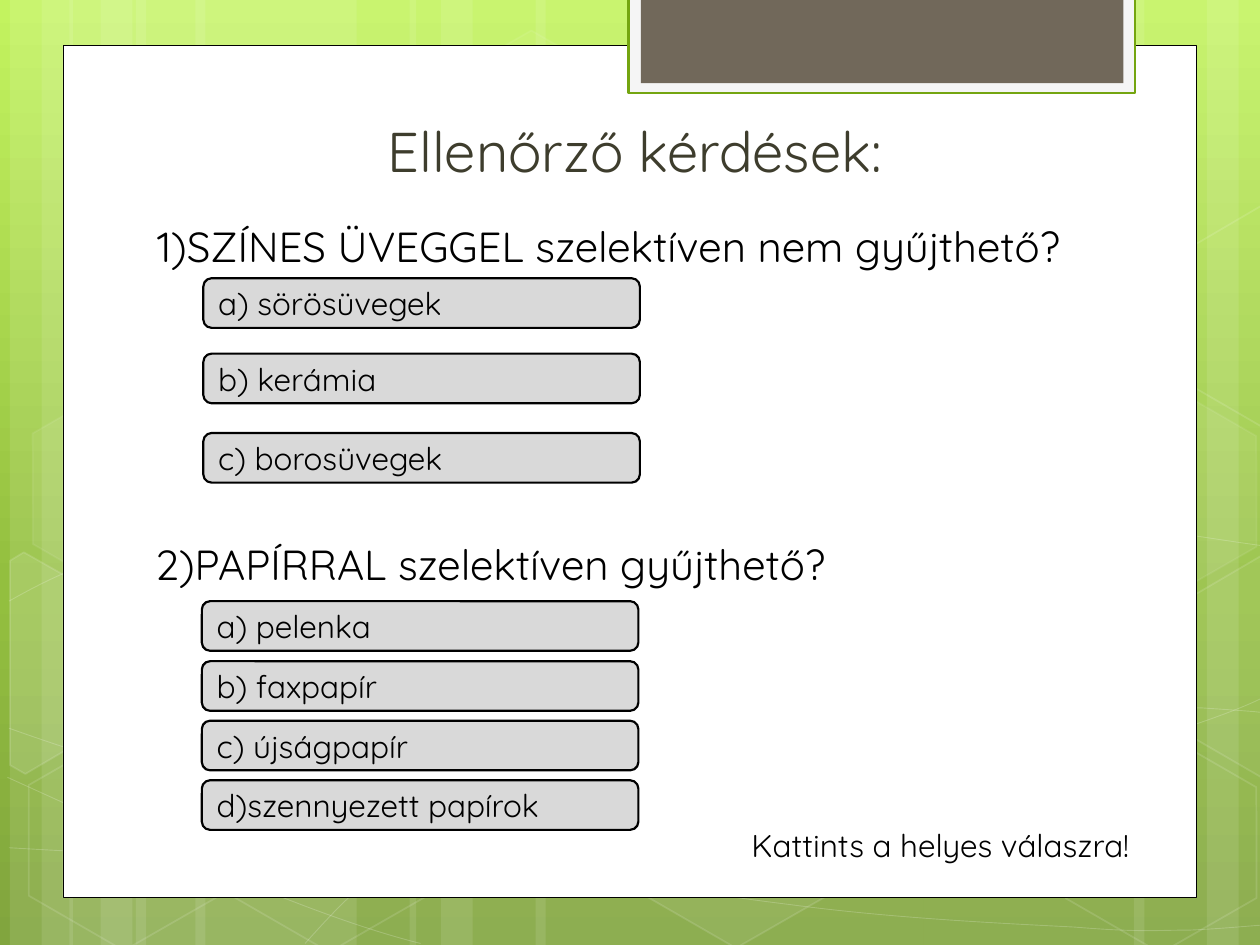
"""Build a quiz slide about selective waste collection."""
from copy import deepcopy
from dataclasses import dataclass
from math import cos, radians, sin
from typing import Optional

from lxml.etree import SubElement
from pptx import Presentation
from pptx.dml.color import RGBColor
from pptx.enum.shapes import MSO_SHAPE as Preset
from pptx.enum.text import MSO_ANCHOR as Anchor
from pptx.enum.text import MSO_AUTO_SIZE as AutoSize
from pptx.enum.text import PP_ALIGN as Align
from pptx.oxml.ns import qn
from pptx.util import Cm, Pt

WHITE = RGBColor(0xFF, 0xFF, 0xFF)
BLACK = RGBColor(0x00, 0x00, 0x00)
OFF_WHITE = RGBColor(0xF5, 0xF5, 0xF5)
GREEN = RGBColor(0x74, 0xA5, 0x10)
BROWN = RGBColor(0x71, 0x68, 0x5A)
OLIVE = RGBColor(0x3E, 0x3D, 0x2D)
GREY = RGBColor(0xD9, 0xD9, 0xD9)
SKY = ((0, RGBColor(0xC3, 0xF3, 0x5F)), (0.62, RGBColor(0x93, 0xBF, 0x3F)),
       (1, RGBColor(0x81, 0xA5, 0x3E)))
FONT = "Quicksand"
WIDTH, HEIGHT = 25.4, 19.05
TILT = 30
Point = tuple[float, float]
Points = tuple[Point, ...]


@dataclass(frozen=True)
class Paint:
    fill: Optional[RGBColor] = None
    fill_alpha: int = 100
    line: Optional[RGBColor] = None
    line_alpha: int = 100
    weight: float = 1


@dataclass(frozen=True)
class Area:
    left: float
    top: float
    width: float
    height: float


@dataclass(frozen=True)
class CutHexagon:
    center: Point
    points: Points
    paint: Paint


@dataclass(frozen=True)
class Option:
    text: str
    top: float


@dataclass(frozen=True)
class Question:
    text: str
    left: float
    top: float
    option_left: float
    options: tuple[Option, ...]


def glass(fill_alpha: int, line_alpha: int) -> Paint:
    return Paint(WHITE if fill_alpha else None, fill_alpha, WHITE, line_alpha)


STRIPS = ((2.74, 4.45), (0.2, 1.27), (0.84, 2.11), (3.94, 4.45), (1.4, 1.27),
          (2.03, 2.11), (18.62, 4.45), (24.33, 1.27), (22.86, 2.11),
          (10.8, 7.82), (8.26, 1.27), (8.89, 2.11))
CURVES: tuple[Points, ...] = (
    ((0.18, 17.09), (1.55, 17.17), (2.92, 17.25), (4.83, 17.22), (6.73, 17.2),
     (9.09, 17.15), (11.63, 16.89), (14.17, 16.64), (17.78, 16.15),
     (20.12, 15.67), (22.43, 15.19), (24.82, 14.43), (25.58, 14)),
    ((0.18, 12.12), (0.91, 11.71), (1.65, 11.33), (3.07, 10.95), (4.52, 10.57),
     (6.58, 10.01), (8.81, 9.83), (11.07, 9.65), (13.82, 9.63), (16.61, 9.83),
     (19.41, 10.03), (24.05, 10.82), (25.58, 11.02)),
    ((0.15, 15.67), (3.23, 17.07), (6.27, 18.47), (8.48, 19.02)),
    ((0.18, 14.68), (0.97, 14.96), (1.78, 15.24), (3.25, 15.65), (4.72, 16.03),
     (6.93, 16.66), (9.07, 17.09), (11.18, 17.53), (13.84, 17.98),
     (15.95, 18.24), (18.06, 18.52), (20.32, 18.62), (21.67, 18.69),
     (22.99, 18.8), (23.34, 18.75), (24, 18.75), (24.66, 18.72),
     (25.12, 18.67), (25.58, 18.64)),
    ((6.15, 19.02), (6.6, 18.52), (7.06, 18.01), (7.67, 17.55), (8.28, 17.09),
     (9.14, 16.59), (9.86, 16.23), (10.57, 15.88), (11, 15.72), (11.94, 15.47),
     (12.85, 15.21), (14.55, 14.86), (15.44, 14.68), (16.36, 14.5),
     (16.48, 14.5), (17.27, 14.45), (18.06, 14.38), (19.3, 14.3),
     (20.17, 14.27), (21.06, 14.25), (22.5, 14.27), (22.5, 14.27),
     (22.5, 14.27), (24.21, 14.27), (24.21, 14.27), (24.66, 14.3),
     (25.1, 14.33), (25.32, 14.35), (25.55, 14.38), (25.48, 14.35),
     (25.55, 14.38)),
)
HEXAGONS = ((8.48, 0.91, glass(4, 8)), (12.62, 14.96, glass(6, 12)),
            (0.28, 15.01, glass(0, 12)), (0.36, 7.92, glass(7, 8)),
            (4.42, 15.04, glass(0, 12)), (19.13, 11.51, glass(10, 12)),
            (21.18, 15.06, glass(0, 12)), (21.18, 7.98, glass(7, 8)))
CUT_HEXAGONS = (
    CutHexagon((0.91, 13.59), ((0.2, 11.3), (0.48, 11.13), (2.44, 12.24), (2.41, 14.48),
                               (0.51, 15.6), (0.2, 15.42)), glass(10, 12)),
    CutHexagon((25.02, 13.21), ((23.52, 12.32), (25.43, 11.2), (25.63, 11.33), (25.63, 15.57),
                                (25.45, 15.67), (23.52, 14.55)), glass(4, 12)),
    CutHexagon((25.02, 6.12), ((23.52, 5.26), (25.43, 4.14), (25.65, 4.27), (25.63, 8.51),
                               (25.45, 8.61), (23.52, 7.49)), glass(0, 12)),
)
PANELS = ((Area(1.27, 0.91, 22.86, 17.19), Paint(WHITE, line=BLACK, weight=0.5)),
          (Area(12.67, -0.05, 10.21, 1.93), Paint(OFF_WHITE, line=GREEN, weight=1.25)),
          (Area(12.92, -0.05, 9.73, 1.73), Paint(BROWN)))
QUESTIONS = (
    Question("1)SZÍNES ÜVEGGEL szelektíven nem gyűjthető?", 2.92, 4.32, 4.1,
             (Option("a) sörösüvegek", 5.61), Option("b) kerámia", 7.13),
              Option("c) borosüvegek", 8.73))),
    Question("2)PAPÍRRAL szelektíven gyűjthető?", 2.88, 10.73, 4.07,
             (Option("a) pelenka", 12.12), Option("b) faxpapír", 13.33),
              Option("c) újságpapír", 14.53), Option("d)szennyezett papírok", 15.73))),
)


def apply_fill(fill, color: Optional[RGBColor], alpha: int) -> None:
    if color is None:
        fill.background()
        return
    fill.solid()
    fill.fore_color.rgb = color
    if alpha < 100:
        tint = fill._xPr.find(f"{qn('a:solidFill')}/{qn('a:srgbClr')}")
        SubElement(tint, qn("a:alpha")).set("val", str(alpha * 1000))


def apply_paint(shape, paint: Paint) -> None:
    shape.shadow.inherit = False
    apply_fill(shape.fill, paint.fill, paint.fill_alpha)
    apply_fill(shape.line.fill, paint.line, paint.line_alpha)
    if paint.line is not None:
        shape.line.width = Pt(paint.weight)


def add_preset(shapes, preset, area: Area, paint: Paint):
    shape = shapes.add_shape(preset, Cm(area.left), Cm(area.top), Cm(area.width), Cm(area.height))
    apply_paint(shape, paint)
    return shape


def add_outline(shapes, points: Points, paint: Paint, close: bool):
    start, *rest = [(Cm(x), Cm(y)) for x, y in points]
    builder = shapes.build_freeform(*start)
    builder.add_line_segments(rest, close=close)
    shape = builder.convert_to_shape()
    apply_paint(shape, paint)
    return shape


def add_curve(shapes, controls: Points, paint: Paint) -> None:
    shape = add_outline(shapes, controls, paint, False)
    segments = list(shape.element.iter(qn("a:lnTo")))
    outline = segments[0].getparent()
    for first in range(0, len(segments), 3):
        bend = SubElement(outline, qn("a:cubicBezTo"))
        for segment in segments[first:first + 3]:
            bend.append(segment[0])
            outline.remove(segment)


def turn_back(point: Point, center: Point) -> Point:
    dx, dy = point[0] - center[0], point[1] - center[1]
    c, s = cos(radians(TILT)), sin(radians(TILT))
    return center[0] + dx * c + dy * s, center[1] - dx * s + dy * c


def write_text(frame, text: str, *, size: float, color: RGBColor = BLACK,
               align=Align.LEFT, anchor=Anchor.TOP, wrap: bool = True,
               auto_size=AutoSize.NONE) -> None:
    frame.word_wrap, frame.auto_size, frame.vertical_anchor = wrap, auto_size, anchor
    para = frame.paragraphs[0]
    para.alignment = align
    span = para.add_run()
    span.text = text
    span.font.name, span.font.size, span.font.color.rgb = FONT, Pt(size), color


def add_note(slide, text: str, area: Area, *, size: float, wrap: bool = True) -> None:
    box = slide.shapes.add_textbox(Cm(area.left), Cm(area.top), Cm(area.width), Cm(area.height))
    write_text(box.text_frame, text, size=size, wrap=wrap, auto_size=AutoSize.SHAPE_TO_FIT_TEXT)


def paint_background(slide) -> None:
    fill = slide.background.fill
    fill.gradient()
    fill.gradient_angle = 270
    stop_list = next(slide.element.iter(qn("a:gsLst")))
    stop_list.append(deepcopy(stop_list[0]))
    for stop, (position, color) in zip(fill.gradient_stops, SKY):
        stop.position, stop.color.rgb = position, color


def draw_scenery(slide) -> None:
    group = slide.shapes.add_group_shape()
    for left, width in STRIPS:
        add_preset(group.shapes, Preset.RECTANGLE, Area(left, 0, width, HEIGHT), Paint(WHITE, 10))
    for controls in CURVES:
        add_curve(group.shapes, controls, Paint(line=WHITE, line_alpha=20, weight=0.5))
    for left, top, paint in HEXAGONS:
        hexagon = add_preset(group.shapes, Preset.HEXAGON, Area(left, top, 4.45, 3.86), paint)
        hexagon.adjustments[0], hexagon.rotation = 0.29, TILT
    for cut in CUT_HEXAGONS:
        level = tuple(turn_back(point, cut.center) for point in cut.points)
        add_outline(group.shapes, level, cut.paint, True).rotation = TILT
    panels = [add_preset(slide.shapes, Preset.RECTANGLE, *panel) for panel in PANELS]
    for shape in (group, *panels):
        slide.slide_layout.shapes.element.append(shape.element)


def place_title(slide, text: str) -> None:
    title = slide.shapes.title
    title.left, title.top, title.width, title.height = Cm(1.3), Cm(1.73), Cm(22.81), Cm(2.59)
    title.text_frame.margin_left = Cm(0.45)
    write_text(title.text_frame, text, size=32, color=OLIVE, align=Align.CENTER,
               anchor=Anchor.MIDDLE)


def draw_question(slide, question: Question) -> None:
    add_note(slide, question.text, Area(question.left, question.top, 19.61, 1.27), size=24)
    for option in question.options:
        button = add_preset(slide.shapes, Preset.ROUNDED_RECTANGLE,
                            Area(question.option_left, option.top, 8.8, 1),
                            Paint(GREY, line=BLACK, weight=1.25))
        write_text(button.text_frame, option.text, size=18, anchor=Anchor.MIDDLE)


def main() -> None:
    deck = Presentation()
    deck.slide_width, deck.slide_height = Cm(WIDTH), Cm(HEIGHT)
    page = deck.slides.add_slide(deck.slide_layouts[5])
    paint_background(page)
    draw_scenery(page)
    place_title(page, "Ellenőrző kérdések:")
    for question in QUESTIONS:
        draw_question(page, question)
    add_note(page, "Kattints a helyes válaszra!", Area(14.9, 16.52, 8.36, 1.02),
             size=18, wrap=False)
    deck.save("out.pptx")


if __name__ == "__main__":
    main()
